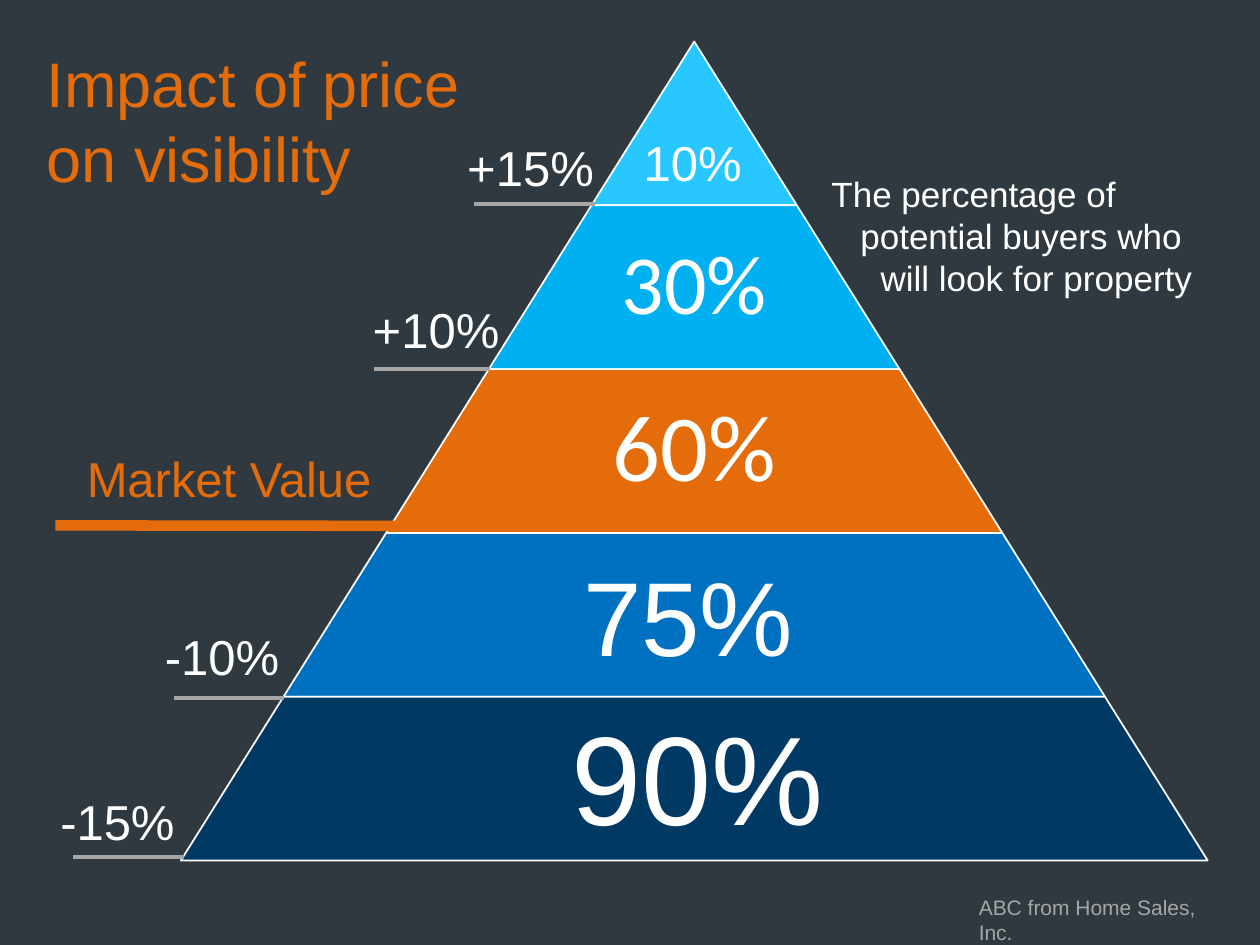
from lxml import etree
from pptx import Presentation
from pptx import util as u
from pptx.dml.color import RGBColor
from pptx.enum import shapes, text
from pptx.oxml import ns

WHITE, ORANGE, GREY = "FFFFFF", "E46C0A", "A6A6A6"


def color(value):
    return RGBColor.from_string(value)


class SlideBuilder:
    """Holds the text style and the current slide."""
    font = "Arial"

    def __init__(self, slide, background):
        self.slide = slide
        fill = slide.background.fill
        fill.solid()
        fill.fore_color.rgb = color(background)

    def fill_text(self, shape, lines, size, ink, font=None, indents=()):
        frame = shape.text_frame
        for index, line in enumerate(lines):
            paragraph = frame.paragraphs[0] if index == 0 else frame.add_paragraph()
            paragraph.alignment = text.PP_ALIGN.LEFT
            if indents:
                margin = u.Inches(indents[index])
                paragraph._p.get_or_add_pPr().set("marL", str(margin))
            run = paragraph.add_run()
            run.text = line
            run.font.size = u.Pt(size)
            run.font.name = font or self.font
            run.font.color.rgb = color(ink)
        return frame

    def title(self, box, lines, size, ink):
        shape = self.slide.shapes.title
        shape.left, shape.top, shape.width, shape.height = map(u.Inches, box)
        frame = self.fill_text(shape, lines, size, ink)
        frame.vertical_anchor = text.MSO_ANCHOR.TOP
        frame.auto_size = text.MSO_AUTO_SIZE.NONE
        frame.word_wrap = False

    def label(self, box, lines, size, ink=WHITE, wrap=False, indents=()):
        shape = self.slide.shapes.add_textbox(*map(u.Inches, box))
        frame = self.fill_text(shape, lines, size, ink, indents=indents)
        frame.word_wrap = wrap
        frame.auto_size = text.MSO_AUTO_SIZE.SHAPE_TO_FIT_TEXT

    def centred_label(self, box, line, size, font):
        shape = self.slide.shapes.add_textbox(*map(u.Inches, box))
        frame = self.fill_text(shape, [line], size, WHITE, font)
        frame.word_wrap = True
        frame.vertical_anchor = text.MSO_ANCHOR.MIDDLE
        frame.margin_left = frame.margin_right = u.Inches(0.07)
        frame.margin_top = frame.margin_bottom = u.Inches(0.07)
        frame.paragraphs[0].alignment = text.PP_ALIGN.CENTER
        frame.paragraphs[0].line_spacing = 0.9

    def band(self, box, slant, fill):
        shape = self.slide.shapes.add_shape(
            shapes.MSO_SHAPE.TRAPEZOID, *map(u.Inches, box))
        shape.adjustments[0] = slant
        shape.shadow.inherit = False
        shape.fill.solid()
        shape.fill.fore_color.rgb = color(fill)
        shape.line.color.rgb = color(WHITE)
        shape.line.width = u.Pt(1)

    def line(self, start, end, ink, width):
        connector = self.slide.shapes.add_connector(
            shapes.MSO_CONNECTOR.STRAIGHT, *map(u.Inches, start + end))
        connector.line.color.rgb = color(ink)
        connector.line.width = u.Pt(width)
        etree.SubElement(connector._element.spPr, ns.qn("a:effectLst"))


def main():
    presentation = Presentation()
    presentation.slide_width = u.Inches(10)
    presentation.slide_height = u.Inches(7.5)
    title_only = presentation.slide_layouts[5]
    builder = SlideBuilder(presentation.slides.add_slide(title_only), "2F393F")

    builder.title((0.27, 0.3, 3.65, 1.31),
                  ["Impact of price", "on visibility"], 36, ORANGE)

    # Pyramid: each band is one step wider than the band above
    center, top, step, height = 5.51, 0.33, 1.63, 1.3
    band_fills = ["29C7FF", "00B0F0", ORANGE, "0070C0", "003964"]
    for level, fill in enumerate(band_fills):
        width = step * (level + 1)
        builder.band((center - width / 2, top + level * height, width, height),
                     step / 2 / height, fill)

    # Share of buyers in each band
    builder.label((5.01, 1, 0.99, 0.57), ["10%"], 28)
    builder.centred_label((4.45, 1.63, 2.12, height), "30%", 48, "Calibri")
    builder.centred_label((3.92, 2.93, 3.18, height), "60%", 54, "Calibri")
    builder.label((4.53, 4.33, 1.89, 1.11), ["75%"], 60)
    builder.label((4.44, 5.5, 2.22, 1.31), ["90%"], 72)

    # Price steps: label, its box, and the rule under it
    price_steps = [
        ("+15%", (3.61, 1.04, 1.22, 0.57), 3.76, 4.72, 1.62),
        ("+10%", (2.86, 2.33, 1.22, 0.57), 2.97, 3.89, 2.93),
        ("-10%", (1.21, 4.92, 1.12, 0.57), 1.38, 2.25, 5.54),
        ("-15%", (0.38, 6.23, 1.12, 0.57), 0.58, 1.46, 6.8),
    ]
    for name, box, left, right, y in price_steps:
        builder.line((left, y), (right, y), GREY, 2.25)
        builder.label(box, [name], 28)

    # Market value marker
    builder.line((0.44, 4.17), (7.83, 4.18), ORANGE, 6)
    builder.label((0.59, 3.51, 2.49, 0.57), ["Market Value"], 28, ORANGE)

    # Explanation, stepped along the slope, and source
    builder.label((6.5, 1.32, 3.49, 1.11),
                  ["The percentage of", "potential buyers who",
                   "will look for property"],
                  20, wrap=True, indents=(0, 0.23, 0.39))
    builder.label((7.67, 7.05, 2.23, 0.3),
                  ["ABC from Home Sales, Inc."], 12, GREY)

    presentation.save("out.pptx")


if __name__ == "__main__":
    main()
